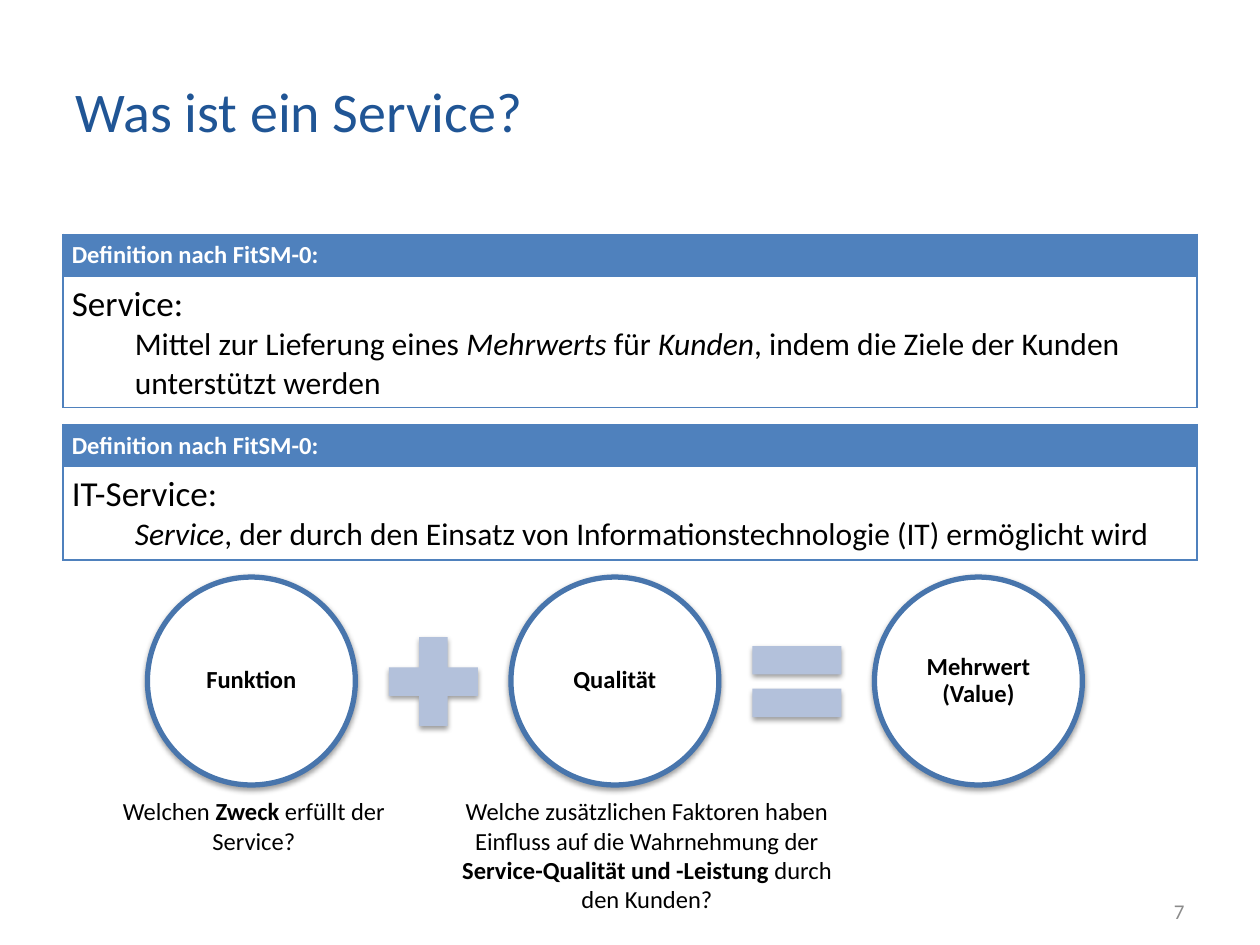
from lxml.etree import SubElement
from pptx import Presentation
from pptx.dml.color import RGBColor
from pptx.enum.shapes import MSO_SHAPE
from pptx.enum.text import MSO_ANCHOR, PP_ALIGN
from pptx.oxml.ns import qn
from pptx.util import Inches, Pt

TITLE_BLUE = RGBColor(0x20, 0x55, 0x95)
TABLE_BLUE = RGBColor(0x4F, 0x81, 0xBD)
RING_BLUE = RGBColor(0x48, 0x75, 0xAC)
PALE_BLUE = RGBColor(0xB3, 0xC1, 0xDB)
GREY = RGBColor(0x8B, 0x8B, 0x8B)
BLACK = RGBColor(0, 0, 0)
WHITE = RGBColor(0xFF, 0xFF, 0xFF)


class SlideBuilder:
    font_name = "Calibri"

    def __init__(self, page):
        self.page = page

    def add_spans(self, para, spans, size, color=BLACK, align=PP_ALIGN.LEFT):
        """Fill a paragraph from (text, style) pairs; style is "", "b" or "i"."""
        para.alignment = align
        for text, style in spans:
            span = para.add_run()
            span.text = text
            self.style_span(span, size, color, "b" in style, "i" in style)

    def style_span(self, span, size, color, bold=False, italic=False):
        font = span.font
        font.name, font.size = self.font_name, Pt(size)
        font.bold, font.italic = bold, italic
        font.color.rgb = color

    def text(self, place, spans, size, color=BLACK, align=PP_ALIGN.LEFT,
             anchor=MSO_ANCHOR.TOP):
        box = self.page.shapes.add_textbox(*map(Inches, place))
        frame = box.text_frame
        frame.word_wrap = True
        frame.vertical_anchor = anchor
        self.add_spans(frame.paragraphs[0], spans, size, color, align)

    def border(self, cell):
        properties = cell._tc.get_or_add_tcPr()
        for side in ("lnL", "lnR", "lnT", "lnB"):
            line = SubElement(properties, qn(f"a:{side}"), w=str(Pt(0.96)))
            fill = SubElement(line, qn("a:solidFill"))
            SubElement(fill, qn("a:srgbClr"), val=str(TABLE_BLUE))

    def definition(self, top, row_heights, term, meaning):
        """Add a two-row table: a coloured heading above a term and its meaning."""
        frame = self.page.shapes.add_table(
            2, 1, Inches(0.5), Inches(top), Inches(9), Inches(sum(row_heights)))
        table = frame.table
        table.horz_banding = False
        for index, fill in enumerate((TABLE_BLUE, WHITE)):
            table.rows[index].height = Inches(row_heights[index])
            cell = table.cell(index, 0)
            cell.margin_left = cell.margin_right = Inches(0.07)
            cell.margin_top = cell.margin_bottom = Inches(0.05)
            self.border(cell)
            cell.fill.solid()
            cell.fill.fore_color.rgb = fill
        heading, body = (table.cell(row, 0).text_frame for row in range(2))
        self.add_spans(heading.paragraphs[0], [("Definition nach FitSM-0:", "b")],
                       14, WHITE)
        self.add_spans(body.paragraphs[0], [(term, "")], 20)
        para = body.add_paragraph()
        para._p.get_or_add_pPr().set("marL", str(Inches(0.5)))
        self.add_spans(para, meaning, 18)

    def shape(self, kind, left, top, size, fill):
        """Add a square-framed shape with a soft shadow below it and no outline."""
        shape = self.page.shapes.add_shape(
            kind, Inches(left), Inches(top), Inches(size), Inches(size))
        shape.fill.solid()
        shape.fill.fore_color.rgb = fill
        shape.line.fill.background()
        shape.shadow.inherit = False
        effects = shape._element.spPr.find(qn("a:effectLst"))
        shadow = SubElement(effects, qn("a:outerShdw"), blurRad=str(Pt(3.1)),
                            dist=str(Pt(1.6)), dir="5400000", rotWithShape="0")
        color = SubElement(shadow, qn("a:srgbClr"), val=str(BLACK))
        SubElement(color, qn("a:alpha"), val="38000")
        return shape

    def circle(self, left, label):
        circle = self.shape(MSO_SHAPE.OVAL, left, 4.58, 1.65, WHITE)
        circle.line.color.rgb = RING_BLUE
        circle.line.width = Pt(3)
        frame = circle.text_frame
        frame.margin_left = frame.margin_right = Inches(0.02)
        frame.margin_top = frame.margin_bottom = Inches(0.02)
        frame.word_wrap = True
        frame.vertical_anchor = MSO_ANCHOR.MIDDLE
        para = frame.paragraphs[0]
        para.text = label
        para.alignment = PP_ALIGN.CENTER
        para.line_spacing = 0.9
        for span in para.runs:
            self.style_span(span, 14, BLACK, bold=True)

    def operator(self, kind, left):
        self.shape(kind, left, 4.93, 0.96, PALE_BLUE)


def main():
    deck = Presentation()
    deck.slide_width, deck.slide_height = Inches(10), Inches(7.5)
    builder = SlideBuilder(deck.slides.add_slide(deck.slide_layouts[6]))

    builder.text((0.5, 0.3, 8.04, 1.15), [("Was ist ein Service?", "")], 32,
                 TITLE_BLUE, anchor=MSO_ANCHOR.MIDDLE)
    builder.text((7.17, 7.03, 2.33, 0.4), [("7", "")], 12, GREY,
                 PP_ALIGN.RIGHT, MSO_ANCHOR.MIDDLE)

    builder.definition(1.86, (0.33, 1.04), "Service:", [
        ("Mittel zur Lieferung eines ", ""), ("Mehrwerts", "i"), (" für ", ""),
        ("Kunden", "i"), (", indem die Ziele der Kunden unterstützt werden", "")])
    builder.definition(3.37, (0.33, 0.74), "IT-Service:", [
        ("Service", "i"),
        (", der durch den Einsatz von Informationstechnologie (IT) ermöglicht wird", "")])

    pitch = 2.885
    for index, label in enumerate(("Funktion", "Qualität", "Mehrwert\v(Value)")):
        builder.circle(1.17 + index * pitch, label)
    for index, kind in enumerate((MSO_SHAPE.MATH_PLUS, MSO_SHAPE.MATH_EQUAL)):
        builder.operator(kind, 2.96 + index * pitch)

    builder.text((0.63, 6.27, 2.77, 0.56), [
        ("Welchen ", ""), ("Zweck", "b"), (" erfüllt der Service?", "")],
        14, align=PP_ALIGN.CENTER)
    builder.text((3.55, 6.27, 3.17, 1.03), [
        ("Welche zusätzlichen Faktoren haben Einfluss auf die Wahrnehmung der ", ""),
        ("Service-Qualität und -Leistung ", "b"), ("durch den Kunden?", "")],
        14, align=PP_ALIGN.CENTER)

    deck.save("out.pptx")


if __name__ == "__main__":
    main()
